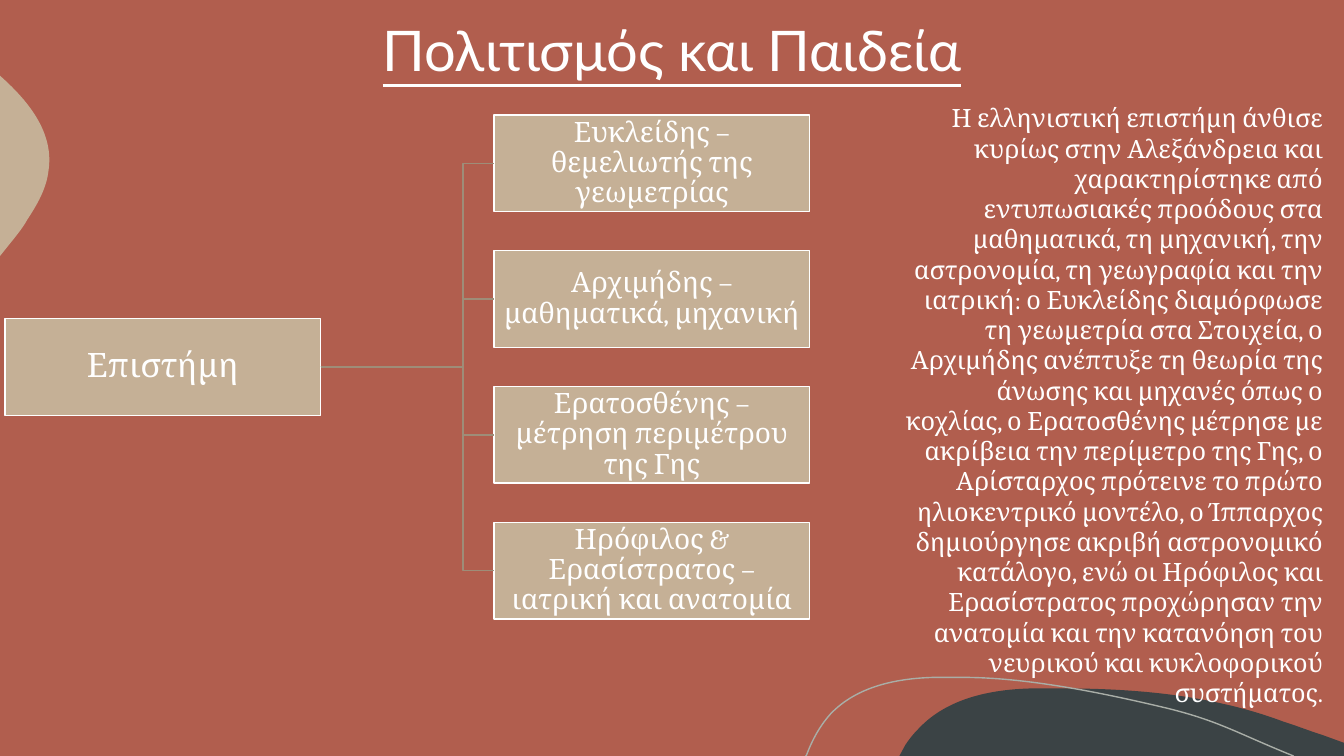
from pptx import Presentation
from pptx import util as u
from pptx.dml.color import RGBColor
from pptx.enum import shapes, text
from pptx.oxml import ns
from lxml import etree

TITLE = "Πολιτισμός και Παιδεία"
ROOT = "Επιστήμη"
BRANCHES = [
    "Ευκλείδης – θεμελιωτής της γεωμετρίας",
    "Αρχιμήδης – μαθηματικά, μηχανική",
    "Ερατοσθένης – μέτρηση περιμέτρου της Γης",
    "Ηρόφιλος & Ερασίστρατος – ιατρική και ανατομία",
]
SUMMARY = (
    "Η ελληνιστική επιστήμη άνθισε κυρίως στην Αλεξάνδρεια και χαρακτηρίστηκε από "
    "εντυπωσιακές προόδους στα μαθηματικά, τη μηχανική, την αστρονομία, τη γεωγραφία "
    "και την ιατρική: ο Ευκλείδης διαμόρφωσε τη γεωμετρία στα Στοιχεία, ο Αρχιμήδης "
    "ανέπτυξε τη θεωρία της άνωσης και μηχανές όπως ο κοχλίας, ο Ερατοσθένης μέτρησε "
    "με ακρίβεια την περίμετρο της Γης, ο Αρίσταρχος πρότεινε το πρώτο ηλιοκεντρικό "
    "μοντέλο, ο Ίππαρχος δημιούργησε ακριβή αστρονομικό κατάλογο, ενώ οι Ηρόφιλος και "
    "Ερασίστρατος προχώρησαν την ανατομία και την κατανόηση του νευρικού και "
    "κυκλοφορικού συστήματος."
)
COLORS = {
    "background": "B15E4E", "slate": "3B4345", "sand": "C5B096",
    "curve": "A9AEA7", "branch": "9E8D78", "white": "FFFFFF",
}
SLATE_HILL = [
    (10.54, 6.83), (11.28, 6.83, 12.04, 6.9, 12.73, 7.16),
    (12.86, 7.2, 12.98, 7.25, 13.11, 7.29), (13.33, 7.37), (13.33, 7.5),
    (8.92, 7.5), (8.98, 7.39), (9.02, 7.33, 9.06, 7.28, 9.11, 7.23),
    (9.39, 6.93, 9.82, 6.84, 10.23, 6.83), (10.33, 6.83, 10.43, 6.83, 10.54, 6.83),
]
SAND_EDGE = [
    (0, 0.75), (0.01, 0.76), (0.3, 1.02, 0.54, 1.33, 0.48, 1.7),
    (0.46, 1.87, 0.37, 2.03, 0.27, 2.18), (0.24, 2.24, 0.17, 2.33, 0.08, 2.44),
    (0, 2.54),
]
THIN_CURVE = [
    (7.99, 7.5), (8, 7.49), (8.06, 7.33, 8.14, 7.19, 8.24, 7.08),
    (8.5, 6.81, 8.89, 6.73, 9.26, 6.72), (9.55, 6.72),
    (10.22, 6.72, 11, 6.89, 11.55, 7.02), (12.09, 7.15, 12.26, 7.27, 12.83, 7.5),
]
BOX_WIDTH, BOX_HEIGHT, BOX_INSET = 3.13, 0.96, 0.02
ROOT_LEFT, BRANCH_LEFT = 0.05, 4.9
BRANCH_TOP, BRANCH_STEP = 1.14, 1.347
SPINE_X = 4.59
UNITS = 100


def color(name):
    return RGBColor.from_string(COLORS[name])


def add_outline(page, outline, fill=None, line=None):
    parts = [tuple(round(value * UNITS) for value in part) for part in outline]
    anchors = [part[-2:] for part in parts]
    left, top = (min(axis) for axis in zip(*anchors))
    builder = page.shapes.build_freeform(*anchors[0], scale=u.Inches(1) / UNITS)
    builder.add_line_segments(anchors[1:], close=fill is not None)
    shape = builder.convert_to_shape()
    segments = list(shape._element.iter(ns.qn("a:lnTo")))
    for part, segment in zip(parts[1:], segments):
        if len(part) == 6:
            segment.tag = ns.qn("a:cubicBezTo")
            for point in list(segment):
                segment.remove(point)
            for x, y in zip(part[::2], part[1::2]):
                etree.SubElement(segment, ns.qn("a:pt"), x=str(x - left), y=str(y - top))
    shape.shadow.inherit = False
    if fill:
        shape.fill.solid()
        shape.fill.fore_color.rgb = color(fill)
    else:
        shape.fill.background()
    if line:
        shape.line.color.rgb = color(line)
        shape.line.width = u.Pt(1)
    else:
        shape.line.fill.background()


def write(frame, words, size, font, align, spacing=None):
    frame.text = words
    frame.word_wrap = True
    para = frame.paragraphs[0]
    para.alignment = align
    para.line_spacing = spacing
    span = para.runs[0]
    span.font.size = u.Pt(size)
    span.font.name = font
    span.font.color.rgb = color("white")
    return span


def add_box(page, words, left, top, size):
    box = page.shapes.add_shape(
        shapes.MSO_SHAPE.RECTANGLE,
        *map(u.Inches, (left, top, BOX_WIDTH, BOX_HEIGHT)))
    box.shadow.inherit = False
    box.fill.solid()
    box.fill.fore_color.rgb = color("sand")
    box.line.color.rgb = color("white")
    box.line.width = u.Pt(1)
    frame = box.text_frame
    frame.margin_left = frame.margin_right = u.Inches(BOX_INSET)
    frame.margin_top = frame.margin_bottom = u.Inches(BOX_INSET)
    frame.vertical_anchor = text.MSO_ANCHOR.MIDDLE
    write(frame, words, size, "Cambria", text.PP_ALIGN.CENTER, 0.9)
    return box


def join(page, root, branch):
    link = page.shapes.add_connector(shapes.MSO_CONNECTOR.ELBOW, 0, 0, 0, 0)
    link.begin_connect(root, 3)
    link.end_connect(branch, 1)
    link.line.color.rgb = color("branch")
    link.line.width = u.Pt(1)
    properties = link._element.spPr
    etree.SubElement(properties, ns.qn("a:effectLst"))
    root_right = ROOT_LEFT + BOX_WIDTH
    bend = round(100000 * (SPINE_X - root_right) / (BRANCH_LEFT - root_right))
    guides = properties.find(ns.qn("a:prstGeom")).find(ns.qn("a:avLst"))
    etree.SubElement(guides, ns.qn("a:gd"), name="adj1", fmla=f"val {bend}")


def main():
    deck = Presentation()
    deck.slide_width, deck.slide_height = u.Inches(13.33), u.Inches(7.5)
    page = deck.slides.add_slide(deck.slide_layouts[5])
    page.background.fill.solid()
    page.background.fill.fore_color.rgb = color("background")

    add_outline(page, SLATE_HILL, fill="slate")
    add_outline(page, SAND_EDGE, fill="sand")
    add_outline(page, THIN_CURVE, line="curve")

    title = page.shapes.title
    title.left, title.top = u.Inches(0.83), u.Inches(0.15)
    title.width, title.height = u.Inches(11.67), u.Inches(0.75)
    title.text_frame.vertical_anchor = text.MSO_ANCHOR.MIDDLE
    title.text_frame.auto_size = text.MSO_AUTO_SIZE.NONE
    span = write(title.text_frame, TITLE, 40, "Lato", text.PP_ALIGN.CENTER, 0.9)
    span.font.underline = True

    root_top = BRANCH_TOP + BRANCH_STEP * (len(BRANCHES) - 1) / 2
    root = add_box(page, ROOT, ROOT_LEFT, root_top, 24)
    for index, words in enumerate(BRANCHES):
        top = BRANCH_TOP + index * BRANCH_STEP
        join(page, root, add_box(page, words, BRANCH_LEFT, top, 20))

    summary = page.shapes.add_textbox(*map(u.Inches, (8.85, 0.97, 4.37, 5.55)))
    write(summary.text_frame, SUMMARY, 18, "Cambria", text.PP_ALIGN.RIGHT)
    summary.text_frame.auto_size = text.MSO_AUTO_SIZE.SHAPE_TO_FIT_TEXT

    deck.save("out.pptx")


if __name__ == "__main__":
    main()
